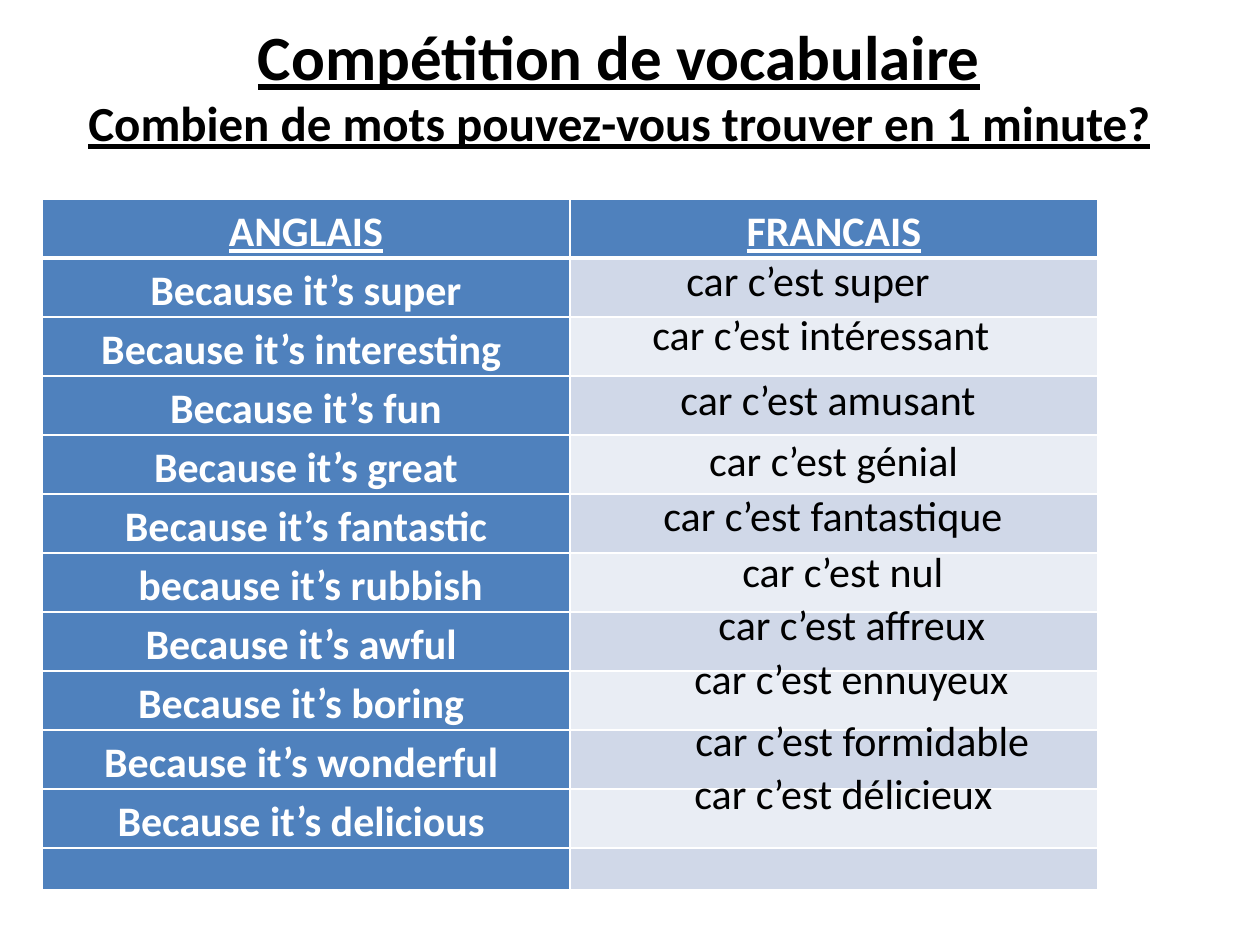
from lxml.etree import SubElement
from pptx import Presentation
from pptx.dml.color import RGBColor
from pptx.enum.text import MSO_ANCHOR, MSO_AUTO_SIZE, PP_ALIGN
from pptx.oxml.ns import qn
from pptx.util import Pt

# Content
TITLE_LINES = [
    ("Compétition de vocabulaire", 36),
    ("Combien de mots pouvez-vous trouver en 1 minute?", 28),
]
HEADINGS = ["ANGLAIS", "FRANCAIS"]
ENGLISH = [
    "Because it’s super",
    "Because it’s interesting ",
    "Because it’s fun",
    "Because it’s great",
    "Because it’s fantastic",
    " because it’s rubbish",
    "Because it’s awful ",
    "Because it’s boring ",
    "Because it’s wonderful ",
    "Because it’s delicious ",
    "",
]
# Answers placed by hand over the table: text, left, top, width
ANSWERS = [
    ("car c’est fantastique", 651, 483, 444),
    ("car c’est affreux", 706, 592, 483),
    ("car c’est intéressant", 640, 302, 504),
    ("car c’est délicieux", 682, 761, 483),
    ("car c’est super", 674, 248, 368),
    ("car c’est génial ", 635, 421, 407),
    ("car c’est amusant", 668, 367, 411),
    ("car c’est nul", 730, 539, 365),
    ("car c’est ennuyeux", 682, 646, 399),
    ("car c’est formidable", 683, 708, 415),
]
CENTRED_ANSWER = "car c’est génial "

# Look
FONT = "Calibri"
TEXT_SIZE = 24
LINE_SPACING = 1.15
BLACK = RGBColor(0x00, 0x00, 0x00)
WHITE = RGBColor(0xFF, 0xFF, 0xFF)
BLUE = RGBColor(0x4F, 0x81, 0xBD)
BANDS = [RGBColor(0xD0, 0xD8, 0xE8), RGBColor(0xE9, 0xED, 0xF4)]

# Layout in px
SLIDE_WIDTH, SLIDE_HEIGHT = 1260, 945
TABLE_LEFT, TABLE_TOP, COLUMN_WIDTH = 42, 199, 528
ROW_HEIGHT, LAST_ROW_HEIGHT = 59, 42
CELL_MARGIN = 9
ANSWER_HEIGHT = 63


def px(length):
    return round(length * 914400 / 126)


def write(paragraph, text, size, color, bold=False, underline=False):
    run = paragraph.add_run()
    run.text = text
    run.font.name = FONT
    run.font.size = Pt(size)
    run.font.color.rgb = color
    run.font.bold = bold
    run.font.underline = underline


def add_borders(cell, bottom_width):
    properties = cell._tc.get_or_add_tcPr()
    for side, width in (("L", 1), ("R", 1), ("T", 1), ("B", bottom_width)):
        line = SubElement(properties, qn("a:ln" + side), w=str(Pt(width)))
        fill = SubElement(line, qn("a:solidFill"))
        SubElement(fill, qn("a:srgbClr"), val=str(WHITE))


def fill_cell(cell, text, color, heading):
    cell.margin_left = cell.margin_right = px(CELL_MARGIN)
    cell.margin_top = cell.margin_bottom = 0
    add_borders(cell, 3 if heading else 1)
    cell.fill.solid()
    cell.fill.fore_color.rgb = color
    if text:
        paragraph = cell.text_frame.paragraphs[0]
        paragraph.alignment = PP_ALIGN.CENTER
        paragraph.line_spacing = LINE_SPACING
        write(paragraph, text, TEXT_SIZE, WHITE, bold=True, underline=heading)


def add_vocabulary_table(slide):
    rows = [HEADINGS] + [[word, ""] for word in ENGLISH]
    height = ROW_HEIGHT * (len(rows) - 1) + LAST_ROW_HEIGHT
    table = slide.shapes.add_table(
        len(rows), 2, px(TABLE_LEFT), px(TABLE_TOP), px(2 * COLUMN_WIDTH), px(height)
    ).table
    table.horz_banding = False
    for row in table.rows:
        row.height = px(ROW_HEIGHT)
    table.rows[len(rows) - 1].height = px(LAST_ROW_HEIGHT)
    for row_index, texts in enumerate(rows):
        heading = row_index == 0
        band = BLUE if heading else BANDS[(row_index - 1) % 2]
        for column_index, color in enumerate((BLUE, band)):
            cell = table.cell(row_index, column_index)
            fill_cell(cell, texts[column_index], color, heading)


def add_title(slide):
    frame = slide.shapes.add_textbox(px(69), px(10), px(1100), px(149)).text_frame
    frame.word_wrap = False
    frame.auto_size = MSO_AUTO_SIZE.SHAPE_TO_FIT_TEXT
    frame.vertical_anchor = MSO_ANCHOR.MIDDLE
    for index, (text, size) in enumerate(TITLE_LINES):
        paragraph = frame.add_paragraph() if index else frame.paragraphs[0]
        paragraph.alignment = PP_ALIGN.CENTER
        write(paragraph, text, size, BLACK, bold=True, underline=True)


def add_answer(slide, text, left, top, width):
    box = slide.shapes.add_textbox(px(left), px(top), px(width), px(ANSWER_HEIGHT))
    frame = box.text_frame
    frame.word_wrap = True
    frame.auto_size = MSO_AUTO_SIZE.SHAPE_TO_FIT_TEXT
    paragraph = frame.paragraphs[0]
    if text == CENTRED_ANSWER:
        paragraph.alignment = PP_ALIGN.CENTER
        paragraph.line_spacing = LINE_SPACING
    write(paragraph, text, TEXT_SIZE, BLACK)


def main():
    presentation = Presentation()
    presentation.slide_width = px(SLIDE_WIDTH)
    presentation.slide_height = px(SLIDE_HEIGHT)
    slide = presentation.slides.add_slide(presentation.slide_layouts[6])
    add_vocabulary_table(slide)
    add_title(slide)
    for answer in ANSWERS:
        add_answer(slide, *answer)
    presentation.save("out.pptx")


if __name__ == "__main__":
    main()
